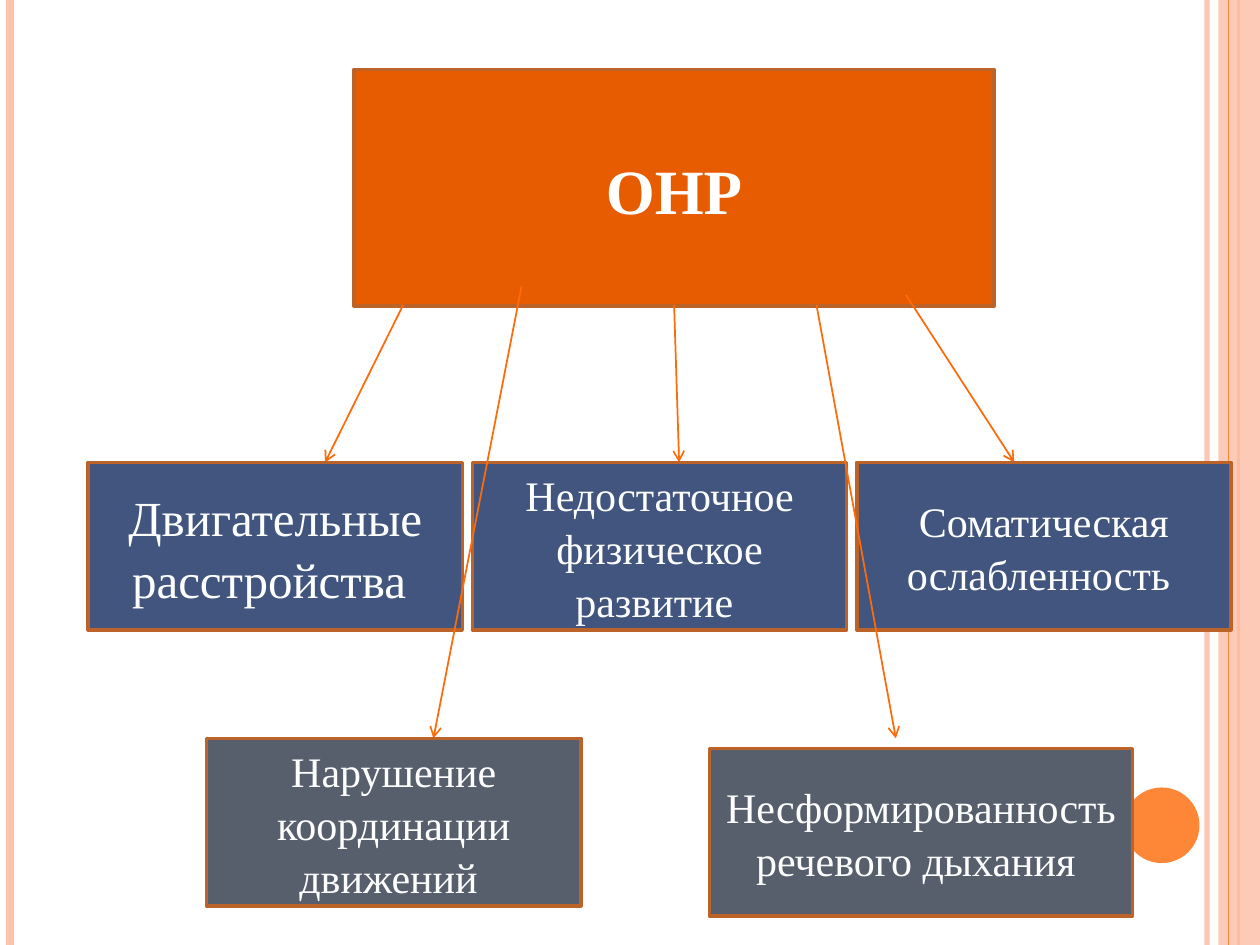
from dataclasses import dataclass

from lxml import etree
from pptx import Presentation
from pptx.dml.color import RGBColor
from pptx.enum.shapes import MSO_CONNECTOR, MSO_SHAPE
from pptx.enum.text import MSO_ANCHOR, PP_ALIGN
from pptx.oxml.ns import qn
from pptx.util import Inches, Pt

RECTANGLE, OVAL = MSO_SHAPE.RECTANGLE, MSO_SHAPE.OVAL
STRAIGHT = MSO_CONNECTOR.STRAIGHT
MIDDLE, CENTER = MSO_ANCHOR.MIDDLE, PP_ALIGN.CENTER


@dataclass(frozen=True)
class Theme:
    font: str = "Times New Roman"
    text: str = "FFFFFF"
    pale: str = "FEC3AE"
    accent: str = "FE8637"
    arrow: str = "FF6B0A"
    border: str = "BC6329"
    root: str = "E75C01"
    upper: str = "42557F"
    lower: str = "575F6D"
    root_size: int = 36
    large_size: int = 28
    body_size: int = 24


theme = Theme()
prs = Presentation()
prs.slide_width, prs.slide_height = Inches(10), Inches(7.5)
slide = prs.slides.add_slide(prs.slide_layouts[6])


def add_box(text, *, at, fill, kind=RECTANGLE, border=None, size=theme.body_size,
            bold=False, opacity=100):
    """Add a filled shape with centred text; at is left, top, width, height."""
    box = slide.shapes.add_shape(kind, *map(Inches, at))
    box.shadow.inherit = False
    box.fill.solid()
    box.fill.fore_color.rgb = RGBColor.from_string(fill)
    if opacity < 100:
        color = box.fill._xPr.find(f".//{qn('a:srgbClr')}")
        etree.SubElement(color, qn("a:alpha"), val=str(opacity * 1000))
    if border:
        box.line.color.rgb = RGBColor.from_string(border)
        box.line.width = Pt(2)
    else:
        box.line.fill.background()
    if text:
        frame = box.text_frame
        frame.word_wrap = True
        frame.vertical_anchor = MIDDLE
        paragraph = frame.paragraphs[0]
        paragraph.alignment = CENTER
        paragraph.line_spacing = 1.05
        run = paragraph.add_run()
        run.text = text
        run.font.name = theme.font
        run.font.size = Pt(size)
        run.font.bold = bold
        run.font.color.rgb = RGBColor.from_string(theme.text)


def add_line(start, end, *, color, width, arrow=False, opacity=100):
    line = slide.shapes.add_connector(STRAIGHT, *map(Inches, (*start, *end)))
    line.line.color.rgb = RGBColor.from_string(color)
    line.line.width = Pt(width)
    properties = line.line._get_or_add_ln()
    if opacity < 100:
        rgb = properties.find(f".//{qn('a:srgbClr')}")
        etree.SubElement(rgb, qn("a:alpha"), val=str(opacity * 1000))
    if arrow:
        etree.SubElement(properties, qn("a:tailEnd"), type="arrow")
    etree.SubElement(line._element.spPr, qn("a:effectLst"))


# Page edges
for x, color, width, opacity in [
    (9.58, theme.pale, 3, 93),
    (0.08, theme.pale, 4.5, 100),
    (9.83, theme.accent, 1.5, 100),
]:
    add_line((x, 0), (x, 7.5), color=color, width=width, opacity=opacity)
add_box("", at=(9.67, 0, 0.33, 7.5), fill=theme.pale, opacity=87)
add_line((9.75, 0), (9.75, 7.5), color=theme.accent, width=0.75)
add_box("", at=(8.92, 6.25, 0.6, 0.6), fill=theme.accent, kind=OVAL)

# Root of the diagram
add_box("ОНР", at=(2.81, 0.55, 5.08, 1.88), fill=theme.root, border=theme.border,
        size=theme.root_size, bold=True)

# Upper row
upper_top, lower_top = 3.67, 5.86
box_width, box_height = 2.97, 1.33
upper_arrows = [(3.2, 2.42, 2.58), (5.35, 2.42, 5.39), (7.19, 2.34, 8.05)]
lower_arrows = [(4.14, 2.27, 3.44), (6.48, 2.42, 7.11)]

for x, y, tip_x in upper_arrows:
    add_line((x, y), (tip_x, upper_top), color=theme.arrow, width=1, arrow=True)

upper_causes = [
    ("Двигательные расстройства ", theme.large_size),
    ("Недостаточное физическое развитие ", theme.body_size),
    ("Соматическая ослабленность ", theme.body_size),
]
for column, (cause, size) in enumerate(upper_causes):
    add_box(cause, at=(0.7 + column * 3.05, upper_top, box_width, box_height),
            fill=theme.upper, border=theme.border, size=size)

# Lower row, with arrows passing over the upper row
for x, y, tip_x in lower_arrows:
    add_line((x, y), (tip_x, lower_top), color=theme.arrow, width=1, arrow=True)

lower_causes = [
    ("Нарушение координации движений ", 1.64, lower_top, box_width),
    ("Несформированность речевого дыхания ", 5.63, 5.94, 3.36),
]
for cause, left, top, width in lower_causes:
    add_box(cause, at=(left, top, width, box_height), fill=theme.lower,
            border=theme.border)

prs.save("out.pptx")
